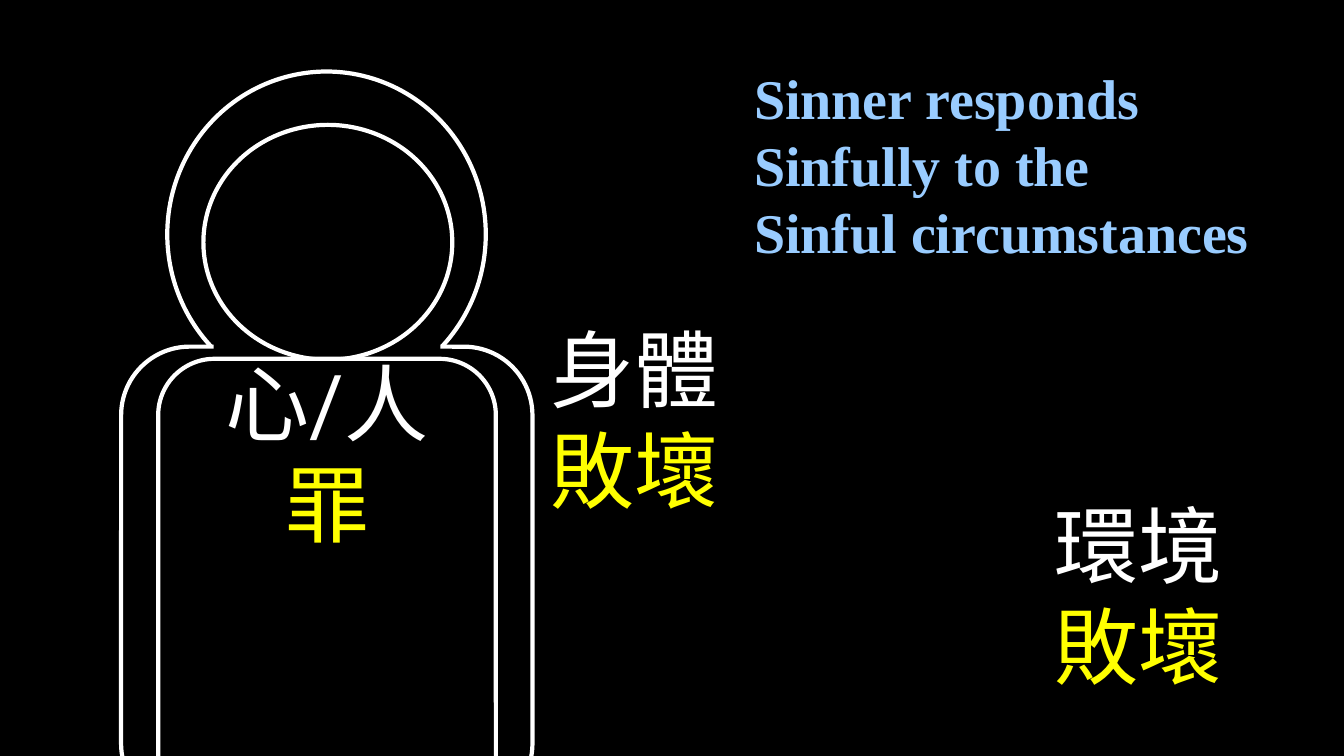
from dataclasses import dataclass

from pptx import Presentation
from pptx import util as u
from pptx.dml.color import RGBColor
from pptx.enum import shapes, text


@dataclass(frozen=True)
class Theme:
    background: str = "000000"
    outline: str = "FFFFFF"
    title: str = "99CCFF"
    label: str = "FFFFFF"
    fallen: str = "FFFF00"
    title_font: str = "Times New Roman"
    label_font: str = "Roboto"
    title_size: int = 40
    label_size: int = 60
    line_width: int = 3


class SlideBuilder:
    def __init__(self, deck, theme):
        self.theme = theme
        self.page = deck.slides.add_slide(deck.slide_layouts[5])
        fill = self.page.background.fill
        fill.solid()
        fill.fore_color.rgb = RGBColor.from_string(theme.background)

    def set_lines(self, box, lines, colors, font, size, align, bold=False):
        frame = box.text_frame
        frame.text = "\n".join(lines)
        frame.word_wrap = True
        frame.auto_size = text.MSO_AUTO_SIZE.SHAPE_TO_FIT_TEXT
        frame.vertical_anchor = text.MSO_ANCHOR.TOP
        for para, color in zip(frame.paragraphs, colors):
            para.alignment = align
            for span in para.runs:
                span.font.name = font
                span.font.size = u.Pt(size)
                span.font.bold = bold
                span.font.color.rgb = RGBColor.from_string(color)

    def title(self, left, top, width, height, lines):
        box = self.page.shapes.title
        box.left, box.top = u.Pt(left), u.Pt(top)
        box.width, box.height = u.Pt(width), u.Pt(height)
        style = self.theme
        self.set_lines(box, lines, [style.title] * len(lines), style.title_font,
                       style.title_size, text.PP_ALIGN.LEFT, bold=True)

    def label(self, left, top, width, height, lines):
        box = self.page.shapes.add_textbox(
            u.Pt(left), u.Pt(top), u.Pt(width), u.Pt(height))
        style = self.theme
        self.set_lines(box, lines, (style.label, style.fallen), style.label_font,
                       style.label_size, text.PP_ALIGN.CENTER)

    def body_part(self, kind, left, top, width, height, outlined=True):
        part = self.page.shapes.add_shape(
            kind, u.Pt(left), u.Pt(top), u.Pt(width), u.Pt(height))
        part.shadow.inherit = False
        part.fill.solid()
        part.fill.fore_color.rgb = RGBColor.from_string(self.theme.background)
        if outlined:
            part.line.color.rgb = RGBColor.from_string(self.theme.outline)
            part.line.width = u.Pt(self.theme.line_width)
        else:
            part.line.fill.background()


def main():
    deck = Presentation()
    deck.slide_width, deck.slide_height = u.Pt(960), u.Pt(540)
    slide = SlideBuilder(deck, Theme())
    kinds = shapes.MSO_SHAPE
    text_height = 152.6

    slide.title(531.4, 41.8, 477.4, text_height,
                ["Sinner responds", "Sinfully to the", "Sinful circumstances"])

    slide.body_part(kinds.OVAL, 119.5, 51.1, 227.5, 232.6)
    slide.body_part(kinds.ROUNDED_RECTANGLE, 86.5, 247.6, 293.8, 332.6)
    slide.body_part(kinds.RECTANGLE, 152.6, 236.9, 162, 25.2, outlined=False)
    slide.body_part(kinds.OVAL, 145.3, 89.2, 177.8, 167.8)
    slide.body_part(kinds.ROUNDED_RECTANGLE, 113, 256.3, 241.2, 326.2)

    slide.label(374.4, 223.2, 157, text_height, ["身體", "敗壞"])
    slide.label(113, 247.6, 241.2, text_height, ["心/人", "罪"])
    slide.label(734.4, 349.2, 157, text_height, ["環境", "敗壞"])

    deck.save("out.pptx")


if __name__ == "__main__":
    main()
